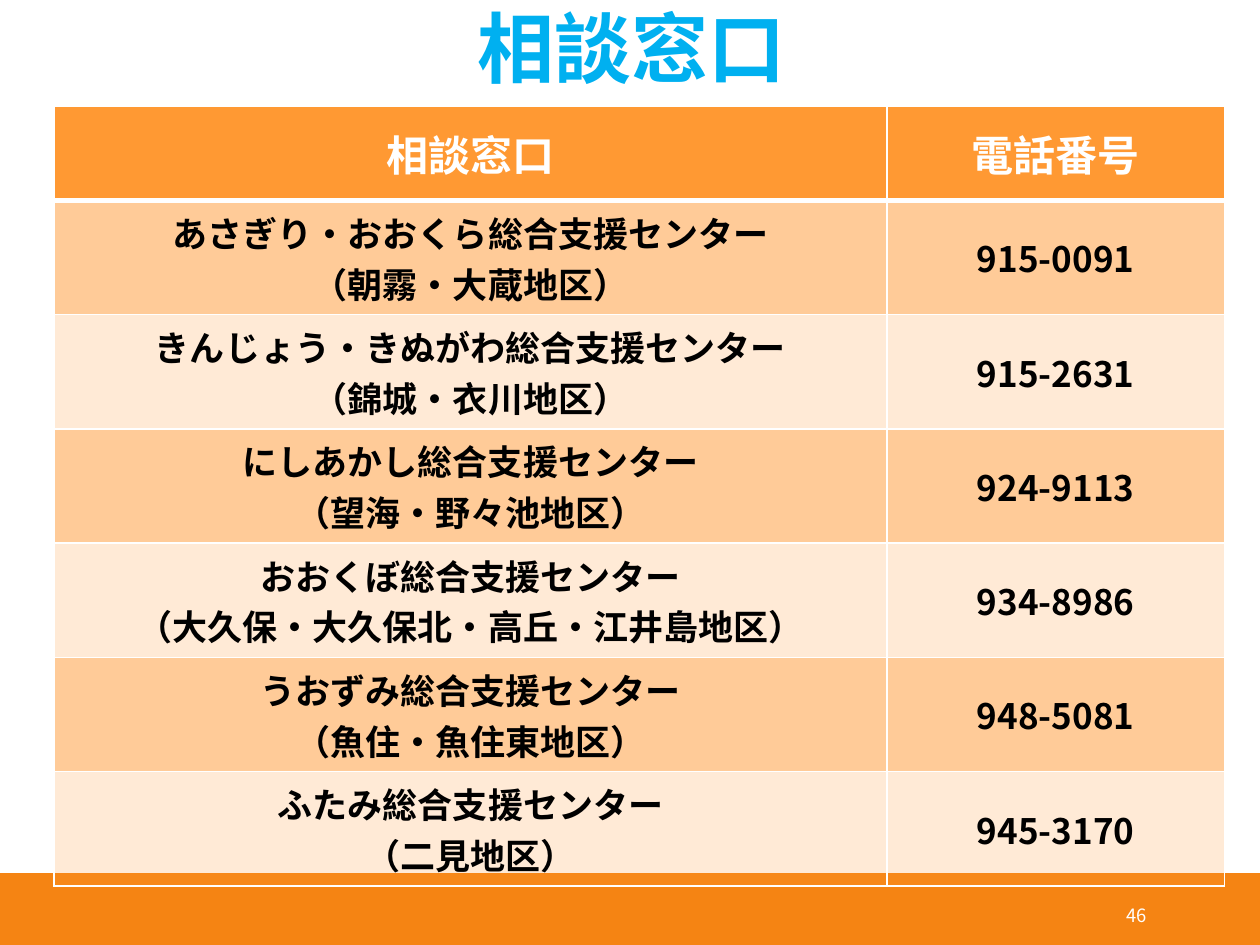
from lxml import etree
from pptx import Presentation
from pptx.dml.color import RGBColor
from pptx.enum.shapes import MSO_SHAPE
from pptx.enum.text import MSO_ANCHOR, MSO_AUTO_SIZE, PP_ALIGN
from pptx.oxml.ns import qn
from pptx.util import Inches, Pt

RECT = MSO_SHAPE.RECTANGLE
TOP, MIDDLE = MSO_ANCHOR.TOP, MSO_ANCHOR.MIDDLE
CENTER, RIGHT = PP_ALIGN.CENTER, PP_ALIGN.RIGHT
NO_FIT = MSO_AUTO_SIZE.NONE

WIDTH, HEIGHT = 10, 7.5
FONT = "Noto Sans CJK JP"
COLORS = {"title": "00B0F0", "bar": "F58413", "table": "FF9933",
          "white": "FFFFFF", "black": "000000"}
TITLE = {"size": Pt(44), "bold": True, "color": "title"}
HEADER = {"size": Pt(24), "bold": True, "color": "white"}
BODY = {"size": Pt(20), "bold": True, "color": "black"}
PAGE = {"size": Pt(10.5), "bold": False, "color": "white"}

CONTACTS = [
    ("相談窓口", "電話番号"),
    ("あさぎり・おおくら総合支援センター\n（朝霧・大蔵地区）", "915-0091"),
    ("きんじょう・きぬがわ総合支援センター\n（錦城・衣川地区）", "915-2631"),
    ("にしあかし総合支援センター\n（望海・野々池地区）", "924-9113"),
    ("おおくぼ総合支援センター\n（大久保・大久保北・高丘・江井島地区）", "934-8986"),
    ("うおずみ総合支援センター\n（魚住・魚住東地区）", "948-5081"),
    ("ふたみ総合支援センター\n（二見地区）", "945-3170"),
]


def rgb(name):
    return RGBColor.from_string(COLORS[name])


class Deck:
    def __init__(self):
        self.prs = Presentation()
        self.prs.slide_width, self.prs.slide_height = Inches(WIDTH), Inches(HEIGHT)
        self.s = self.prs.slides.add_slide(self.prs.slide_layouts[5])

    def fill_text(self, tf, text, style, align):
        """Fill a text frame, one paragraph per line of text."""
        tf.text = text
        for p in tf.paragraphs:
            p.alignment = align
            for r in p.runs:
                r.font.name = FONT
                for key, value in style.items():
                    if key == "color":
                        r.font.color.rgb = rgb(value)
                    else:
                        setattr(r.font, key, value)
                ea = etree.SubElement(r.font._element, qn("a:ea"))
                ea.set("typeface", FONT)

    def title(self, text, box):
        sp = self.s.shapes.title
        sp.left, sp.top, sp.width, sp.height = map(Inches, box)
        tf = sp.text_frame
        tf.auto_size, tf.vertical_anchor = NO_FIT, TOP
        self.fill_text(tf, text, TITLE, CENTER)
        tf.paragraphs[0].line_spacing = 0.9

    def bar(self, top, height):
        """Draw a band across the whole slide."""
        sp = self.s.shapes.add_shape(RECT, 0, Inches(top), Inches(WIDTH), Inches(height))
        sp.shadow.inherit = False
        sp.fill.solid()
        sp.fill.fore_color.rgb = rgb("bar")
        sp.line.fill.background()

    def text(self, text, box, style, align):
        tf = self.s.shapes.add_textbox(*map(Inches, box)).text_frame
        tf.word_wrap, tf.vertical_anchor = True, MIDDLE
        self.fill_text(tf, text, style, align)

    def cell(self, cell, text, style, opacity, borders):
        """Format a cell; borders maps a side to its width in points."""
        cell.vertical_anchor = MIDDLE
        self.fill_text(cell.text_frame, text, style, CENTER)
        cell.fill.solid()
        cell.fill.fore_color.rgb = rgb("table")
        tc_pr = cell._tc.get_or_add_tcPr()
        if opacity < 100:
            color = tc_pr.find(qn("a:solidFill"))[0]
            etree.SubElement(color, qn("a:alpha")).set("val", str(opacity * 1000))
        for i, side in enumerate("LRTB"):
            ln = etree.Element(qn("a:ln" + side), w=str(Pt(borders.get(side, 1))))
            fill = etree.SubElement(ln, qn("a:solidFill"))
            etree.SubElement(fill, qn("a:srgbClr")).set("val", COLORS["white"])
            tc_pr.insert(i, ln)

    def table(self, rows, left, top, col_widths, header_height, row_height):
        heights = [header_height] + [row_height] * (len(rows) - 1)
        frame = self.s.shapes.add_table(
            len(rows), len(col_widths), Inches(left), Inches(top),
            Inches(sum(col_widths)), Inches(sum(heights)))
        table = frame.table
        for col, width in zip(table.columns, col_widths):
            col.width = Inches(width)
        for i, (row, height) in enumerate(zip(rows, heights)):
            table.rows[i].height = Inches(height)
            style = BODY if i else HEADER
            opacity = (50 if i % 2 else 20) if i else 100
            borders = {0: {"B": 3}, 1: {"T": 3}}.get(i, {})
            for j, text in enumerate(row):
                self.cell(table.cell(i, j), text, style, opacity, borders)


def main():
    deck = Deck()
    deck.bar(7, 0.5)
    deck.bar(6.93, 0.07)
    deck.title("相談窓口", (0.51, 0.04, 9, 1.25))
    deck.table(CONTACTS, 0.43, 0.84, (6.61, 2.68), 0.75, 0.89)
    deck.text("46", (8.12, 7.06, 1.08, 0.4), PAGE, RIGHT)
    deck.prs.save("out.pptx")


if __name__ == "__main__":
    main()
